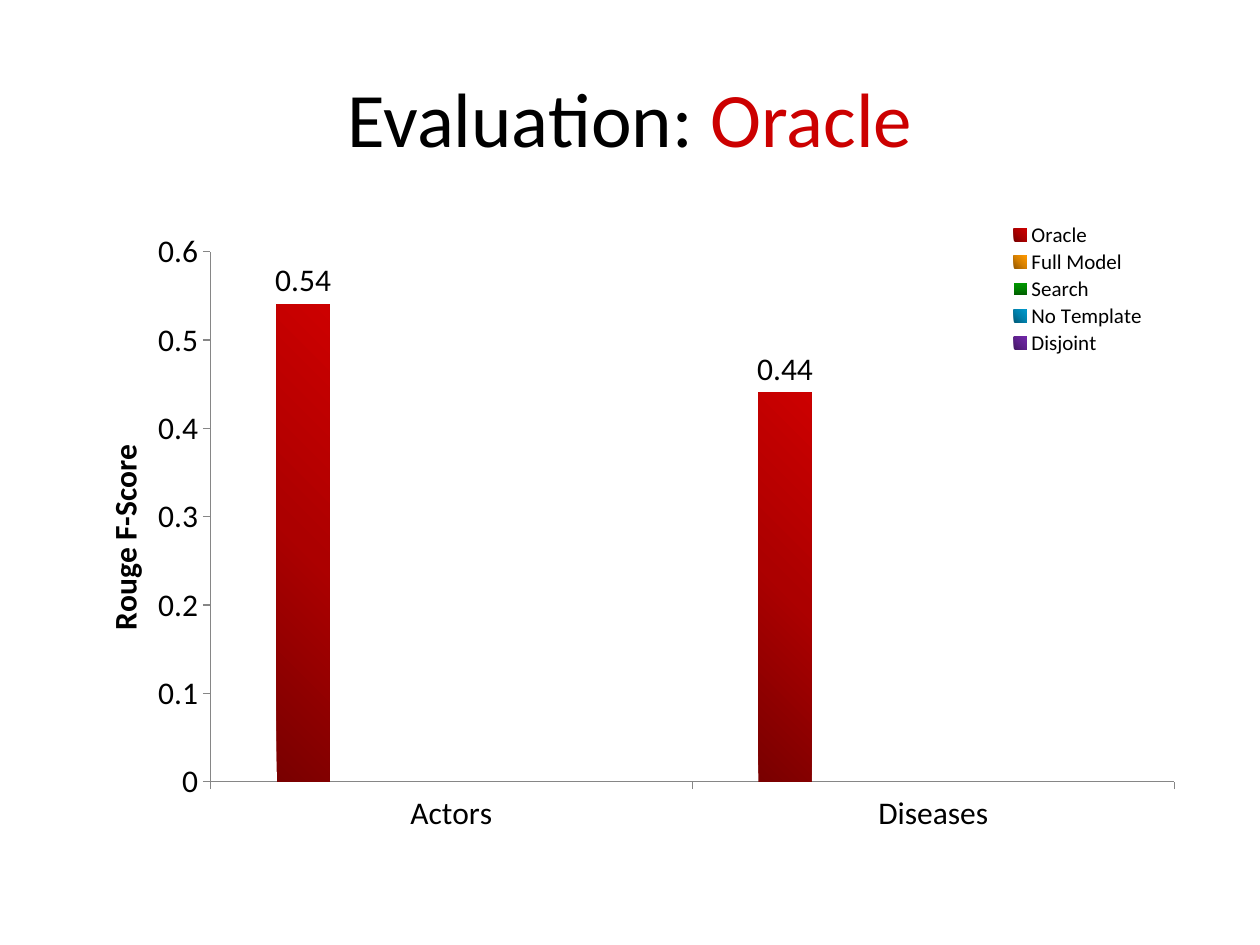
from copy import deepcopy

from pptx import Presentation
from pptx.chart.data import CategoryChartData
from pptx.dml.color import RGBColor
from pptx.enum.chart import XL_CHART_TYPE, XL_LABEL_POSITION, XL_LEGEND_POSITION, XL_TICK_MARK
from pptx.enum.text import MSO_ANCHOR, PP_ALIGN
from pptx.oxml import parse_xml
from pptx.oxml.ns import nsdecls
from pptx.util import Inches, Pt

FONT = "Calibri"
BLACK = RGBColor(0x00, 0x00, 0x00)
RED = RGBColor(0xCC, 0x00, 0x00)
GRAY = RGBColor(0x86, 0x86, 0x86)

TITLE = [("Evaluation: ", BLACK), ("Oracle", RED)]
CATEGORIES = ["Actors", "Diseases"]
# name, values, gradient colours from dark to light, clockwise gradient angle
SERIES = [
    ("Oracle", (0.54, 0.44), ("790000", "AC0000", "CC0000"), 315),
    ("Full Model", (None, None), ("975B00", "D78100", "FF9900"), 315),
    ("Search", (None, None), ("005B00", "008100", "009900"), 270),
    ("No Template", (None, None), ("005B79", "0081AC", "0099CC"), 315),
    ("Disjoint", (None, None), ("431764", "5F218E", "7128A8"), 315),
]


def style_font(font, size, color=BLACK, bold=False):
    font.name = FONT
    font.size = Pt(size)
    font.color.rgb = color
    font.bold = bold


def fill_gradient(series, colors, angle):
    fill = series.format.fill
    fill.gradient()
    fill.gradient_angle = 360 - angle  # python-pptx counts counter-clockwise
    stop_list = series._element.xpath("c:spPr/a:gradFill/a:gsLst")[0]
    stop_list.append(deepcopy(stop_list[-1]))
    for index, (stop, color) in enumerate(zip(fill.gradient_stops, colors)):
        stop.position = index / (len(colors) - 1)
        stop.color.rgb = RGBColor.from_string(color)


def place(element, x, y, width=None, height=None, inner=False):
    """Give a chart part a manual layout, in fractions of the chart."""
    for old in element.xpath("c:layout"):
        element.remove(old)
    parts = [("layoutTarget", "inner")] if inner else []
    parts += [("xMode", "edge"), ("yMode", "edge"), ("x", x), ("y", y)]
    if width is not None:
        parts += [("w", width), ("h", height)]
    body = "".join(f'<c:{tag} val="{value}"/>' for tag, value in parts)
    layout = parse_xml(
        f'<c:layout {nsdecls("c")}><c:manualLayout>{body}</c:manualLayout></c:layout>')
    before = element.xpath("c:tx | c:legendPos")
    element.insert(element.index(before[0]) + 1 if before else 0, layout)


def add_title(slide):
    title = slide.shapes.title
    title.left, title.top, title.width, title.height = map(Inches, (0.5, 0.3, 9, 1.25))
    title.text_frame.vertical_anchor = MSO_ANCHOR.MIDDLE
    para = title.text_frame.paragraphs[0]
    para.alignment = PP_ALIGN.CENTER
    for text, color in TITLE:
        span = para.add_run()
        span.text = text
        style_font(span.font, 44, color)


def style_axes(chart):
    for axis in (chart.category_axis, chart.value_axis):
        axis.has_major_gridlines = False
        axis.major_tick_mark = XL_TICK_MARK.OUTSIDE
        axis.minor_tick_mark = XL_TICK_MARK.NONE
        axis.format.line.color.rgb = GRAY
        style_font(axis.tick_labels.font, 18)

    scores = chart.value_axis
    scores.minimum_scale, scores.maximum_scale, scores.major_unit = 0, 0.6, 0.1
    scores.tick_labels.number_format = "General"
    scores.tick_labels.number_format_is_linked = False
    frame = scores.axis_title.text_frame
    frame.text = "Rouge F-Score"
    style_font(frame.paragraphs[0].runs[0].font, 18, bold=True)
    title = scores.axis_title._element
    title.xpath("c:tx/c:rich/a:bodyPr")[0].set("rot", "-5400000")
    place(title, 0.03, 0.35)


def add_score_chart(slide):
    data = CategoryChartData()
    data.categories = CATEGORIES
    for name, values, _, _ in SERIES:
        data.add_series(name, values)
    chart = slide.shapes.add_chart(
        XL_CHART_TYPE.COLUMN_CLUSTERED,
        Inches(0.5), Inches(1.75), Inches(9), Inches(4.95), data).chart
    chart.has_title = False
    style_font(chart.font, 18)
    style_axes(chart)

    plot = chart.plots[0]
    plot.gap_width = 250
    plot.overlap = -40
    plot.vary_by_categories = False
    for series, (_, _, colors, angle) in zip(plot.series, SERIES):
        fill_gradient(series, colors, angle)
        labels = series.data_labels
        labels.show_value = True
        labels.position = XL_LABEL_POSITION.OUTSIDE_END
        style_font(labels.font, 18)
    place(chart._chartSpace.chart.plotArea, 0.13, 0.05, 0.85, 0.85, inner=True)

    chart.has_legend = True
    legend = chart.legend
    legend.position = XL_LEGEND_POSITION.RIGHT
    legend.include_in_layout = True
    style_font(legend.font, 12)
    place(legend._element, 0.83, 0, 0.13, 0.22)


def main():
    deck = Presentation()
    deck.slide_width, deck.slide_height = Inches(10), Inches(7.5)
    slide = deck.slides.add_slide(deck.slide_layouts[5])
    add_title(slide)
    add_score_chart(slide)
    deck.save("out.pptx")


if __name__ == "__main__":
    main()
